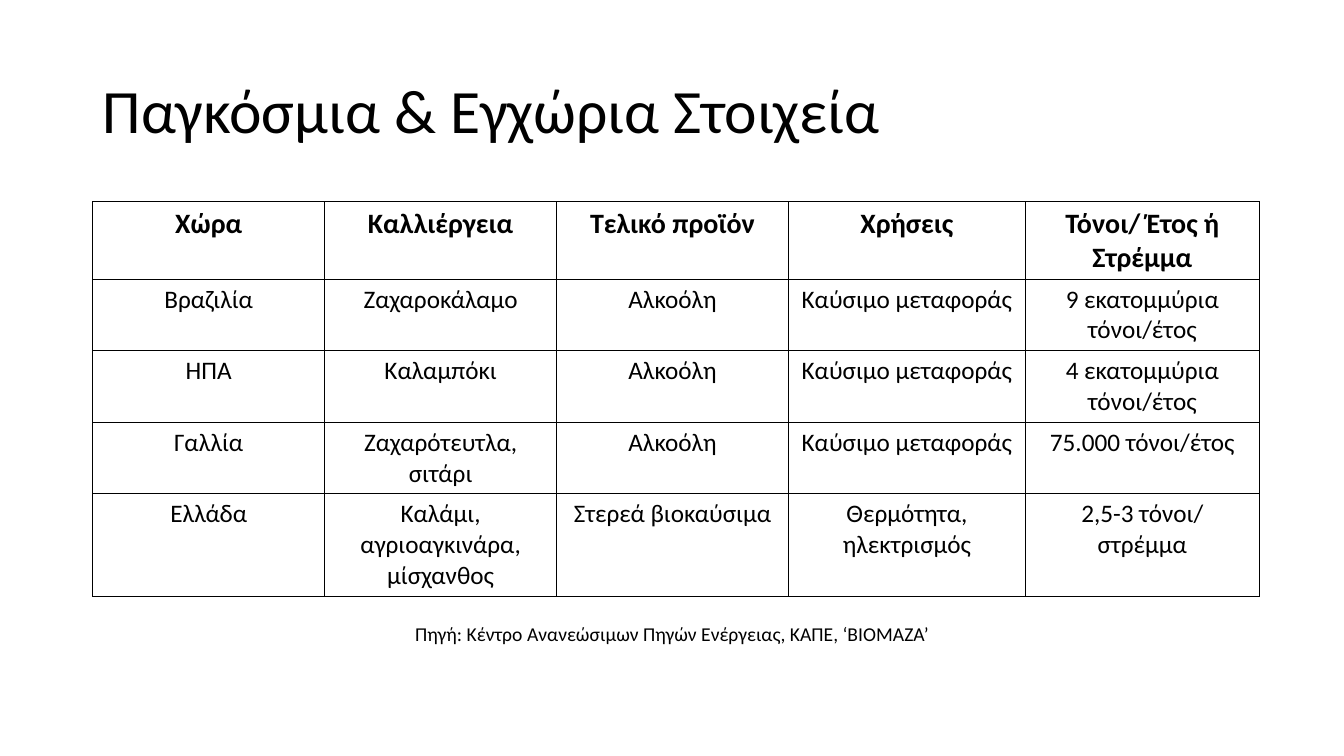
from lxml import etree
from pptx import Presentation
from pptx import util as u
from pptx.dml.color import RGBColor
from pptx.enum import text
from pptx.oxml import ns

HEX = {"ink": "000000", "page": "FFFFFF"}
ROWS = [
    ["Χώρα", "Καλλιέργεια", "Τελικό προϊόν", "Χρήσεις", "Τόνοι/ Έτος ή Στρέμμα"],
    ["Βραζιλία", "Ζαχαροκάλαμο", "Αλκοόλη", "Καύσιμο μεταφοράς", "9 εκατομμύρια τόνοι/έτος"],
    ["ΗΠΑ", "Καλαμπόκι", "Αλκοόλη", "Καύσιμο μεταφοράς", "4 εκατομμύρια τόνοι/έτος"],
    ["Γαλλία", "Ζαχαρότευτλα, σιτάρι", "Αλκοόλη", "Καύσιμο μεταφοράς", "75.000 τόνοι/έτος"],
    ["Ελλάδα", "Καλάμι, αγριοαγκινάρα, μίσχανθος", "Στερεά βιοκαύσιμα",
     "Θερμότητα, ηλεκτρισμός", "2,5-3 τόνοι/ στρέμμα"],
]
WIDTHS = [2.3, 2.3, 2.3, 2.35, 2.32]
HEIGHTS = [0.77, 0.71, 0.71, 0.71, 1.02]


class Deck:
    font = "Calibri"

    def __init__(self):
        self.prs = Presentation()
        self.prs.slide_width = u.Inches(13.33)
        self.prs.slide_height = u.Inches(7.5)
        self.slide = self.prs.slides.add_slide(self.prs.slide_layouts[6])
        fill = self.slide.background.fill
        fill.solid()
        fill.fore_color.rgb = RGBColor.from_string(HEX["page"])

    def style(self, frame, size, bold=False, align=text.PP_ALIGN.LEFT, space=1.0):
        for para in frame.paragraphs:
            para.alignment = align
            para.line_spacing = space
            for run in para.runs:
                run.font.name = self.font
                run.font.size = u.Pt(size)
                run.font.bold = bold
                run.font.color.rgb = RGBColor.from_string(HEX["ink"])

    def label(self, words, box, size, anchor=text.MSO_ANCHOR.TOP, space=1.0):
        frame = self.slide.shapes.add_textbox(*map(u.Inches, box)).text_frame
        frame.word_wrap = True
        frame.vertical_anchor = anchor
        frame.text = words
        self.style(frame, size, space=space)

    def border(self, cell, width=1):
        props = cell._tc.get_or_add_tcPr()
        for at, side in enumerate(("lnL", "lnR", "lnT", "lnB")):
            line = etree.Element(ns.qn("a:" + side), w=str(u.Pt(width)))
            fill = etree.SubElement(line, ns.qn("a:solidFill"))
            etree.SubElement(fill, ns.qn("a:srgbClr"), val=HEX["ink"])
            props.insert(at, line)

    def table(self, rows, left, top, widths, heights):
        box = map(u.Inches, (left, top, sum(widths), sum(heights)))
        grid = self.slide.shapes.add_table(len(rows), len(widths), *box).table
        grid.horz_banding = False
        for col, width in zip(grid.columns, widths):
            col.width = u.Inches(width)
        for r, (row, height) in enumerate(zip(rows, heights)):
            grid.rows[r].height = u.Inches(height)
            head = r == 0
            for c, words in enumerate(row):
                cell = grid.cell(r, c)
                cell.text_frame.text = words
                self.style(cell.text_frame, 20 if head else 18, head, text.PP_ALIGN.CENTER)
                cell.fill.background()
                self.border(cell)


def main():
    deck = Deck()

    # Title
    deck.label("Παγκόσμια & Εγχώρια Στοιχεία", (0.92, 0.4, 11.5, 1.45), 44,
               text.MSO_ANCHOR.MIDDLE, 0.9)

    # Crops and biofuels by country
    deck.table(ROWS, 0.92, 2, WIDTHS, HEIGHTS)

    # Source note
    deck.label("Πηγή: Κέντρο Ανανεώσιμων Πηγών Ενέργειας, ΚΑΠΕ, ‘ΒΙΟΜΑΖΑ’",
               (4.02, 6.12, 5.3, 0.34), 14)

    deck.prs.save("out.pptx")


if __name__ == "__main__":
    main()
